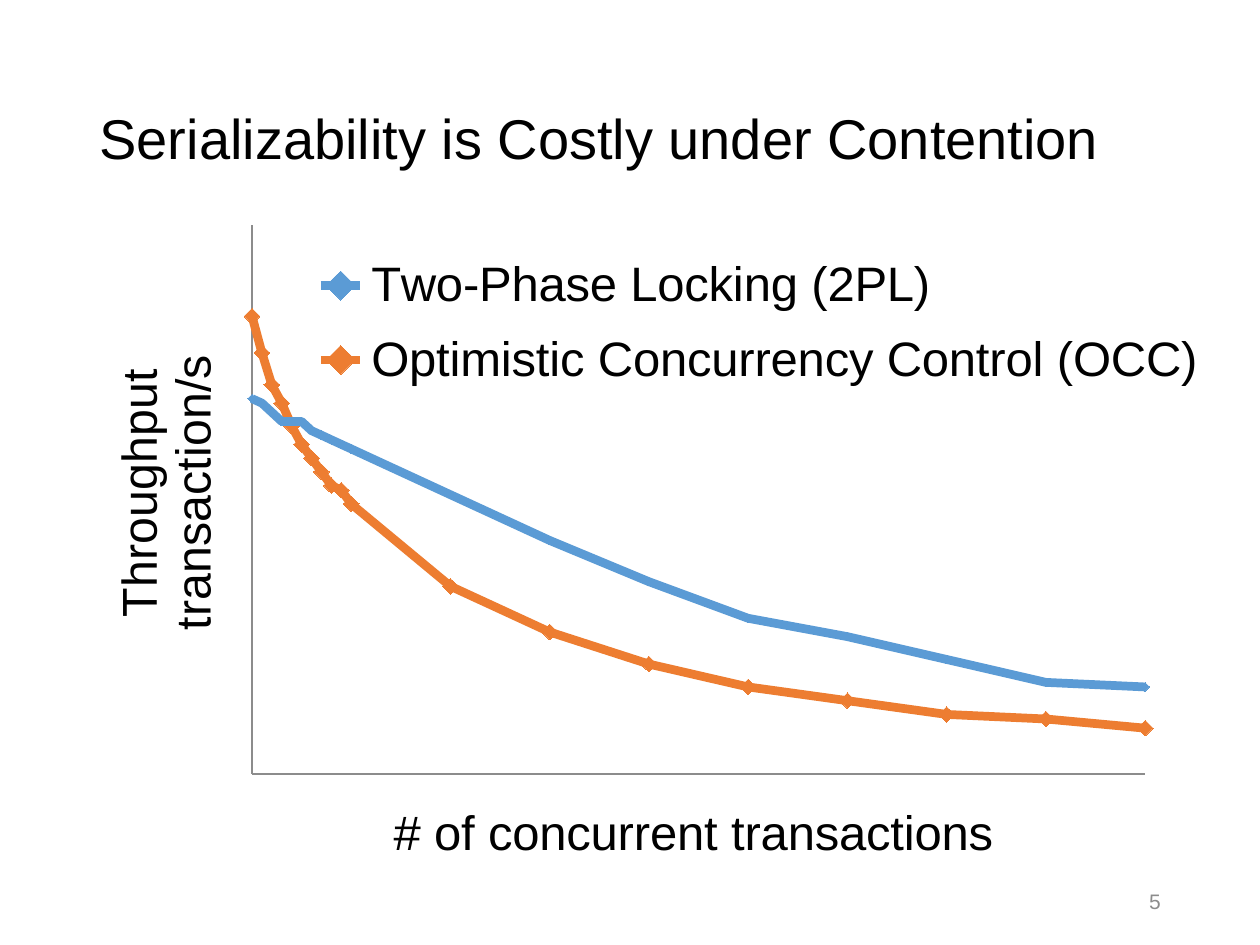
from dataclasses import dataclass

from lxml.etree import SubElement
from pptx import Presentation
from pptx.chart.data import XyChartData
from pptx.dml.color import RGBColor
from pptx.enum.chart import (XL_CHART_TYPE, XL_LEGEND_POSITION as LEGEND_POS,
                             XL_MARKER_STYLE as MARKER,
                             XL_TICK_LABEL_POSITION as LABEL_POS,
                             XL_TICK_MARK as TICK)
from pptx.enum.text import MSO_ANCHOR, PP_ALIGN
from pptx.oxml.ns import qn
from pptx.util import Inches, Pt

FONT = "Arial"
BLACK = RGBColor(0x00, 0x00, 0x00)
GRAY = RGBColor(0x8C, 0x8C, 0x8C)
BLUE = RGBColor(0x5B, 0x9B, 0xD5)
ORANGE = RGBColor(0xED, 0x7D, 0x31)


@dataclass
class Curve:
    name: str
    values: list[int]
    color: RGBColor
    marker: MARKER
    marker_size: int


# Concurrency levels: every step up to 20, then every ten
LEVELS = [*range(10, 20), *range(20, 101, 10)]
CURVES = [
    Curve("Two-Phase Locking (2PL)",
          [82, 81, 79, 77, 77, 77, 75, 74, 73, 72, 71, 61, 51, 42, 34, 30, 25, 20, 19],
          BLUE, MARKER.AUTOMATIC, 5),
    Curve("Optimistic Concurrency Control (OCC)",
          [100, 92, 85, 81, 76, 72, 69, 66, 63, 62, 59, 41, 31, 24, 19, 16, 13, 12, 10],
          ORANGE, MARKER.DIAMOND, 9),
]


def style_font(font, size: float, color: RGBColor = BLACK) -> None:
    font.name, font.size, font.bold = FONT, Pt(size), False
    font.color.rgb = color


def write(tf, text: str, size: float, color: RGBColor = BLACK,
          align: PP_ALIGN = PP_ALIGN.LEFT, spacing: float = 1.0) -> None:
    """Fill a text frame, one paragraph per line of text."""
    for i, line in enumerate(text.split("\n")):
        p = tf.add_paragraph() if i else tf.paragraphs[0]
        p.alignment, p.line_spacing = align, spacing
        r = p.add_run()
        r.text = line
        style_font(r.font, size, color)


def place(element, **fractions: float) -> None:
    """Give a chart part a manual layout in fractions of the chart."""
    for old in element.findall(qn("c:layout")):
        element.remove(old)
    layout = element.makeelement(qn("c:layout"), {})
    manual = SubElement(layout, qn("c:manualLayout"))
    if "w" in fractions:
        SubElement(manual, qn("c:layoutTarget"), val="inner")
    for mode in ("xMode", "yMode"):
        SubElement(manual, qn(f"c:{mode}"), val="edge")
    for key, value in fractions.items():
        SubElement(manual, qn(f"c:{key}"), val=str(value))
    overlay = element.find(qn("c:overlay"))
    if overlay is None:
        element.insert(0, layout)
    else:
        overlay.addprevious(layout)


def format_axis(axis, title: str, low: float, high: float, x: float, y: float) -> None:
    axis.minimum_scale, axis.maximum_scale = low, high
    axis.has_major_gridlines = False
    axis.major_tick_mark = axis.minor_tick_mark = TICK.NONE
    axis.tick_label_position = LABEL_POS.NONE
    axis.format.line.color.rgb = GRAY
    axis.format.line.width = Pt(0.75)
    write(axis.axis_title.text_frame, title, 28, align=PP_ALIGN.CENTER)
    place(axis.axis_title._element, x=x, y=y)


def format_series(series, curve: Curve) -> None:
    series.smooth = False
    series.format.line.color.rgb = curve.color
    series.format.line.width = Pt(5)
    series.marker.style = curve.marker
    series.marker.size = curve.marker_size
    series.marker.format.fill.solid()
    series.marker.format.fill.fore_color.rgb = curve.color
    series.marker.format.line.fill.background()


def add_throughput_chart(slide) -> None:
    data = XyChartData()
    for curve in CURVES:
        series = data.add_series(curve.name)
        for level, value in zip(LEVELS, curve.values):
            series.add_data_point(level, value)
    chart = slide.shapes.add_chart(
        XL_CHART_TYPE.XY_SCATTER_LINES, Inches(0.18), Inches(1.68),
        Inches(9.58), Inches(5.27), data).chart
    chart.has_title = False
    style_font(chart.font, 18)
    plot = chart.plots[0]
    plot.vary_by_categories = False
    for series, curve in zip(plot.series, CURVES):
        format_series(series, curve)

    # Axes and plot area
    format_axis(chart.category_axis, "# of concurrent transactions", 10, 100, 0.3, 0.89)
    format_axis(chart.value_axis, "Throughput\ntransaction/s", 0, 120, 0.07, 0.22)
    place(chart._chartSpace.chart.plotArea, x=0.19, y=0.02, w=0.74, h=0.84)

    # Legend over the plot
    chart.has_legend = True
    chart.legend.position = LEGEND_POS.RIGHT
    chart.legend.include_in_layout = False
    style_font(chart.legend.font, 28)
    place(chart.legend._element, x=0.23, y=0.04, w=0.76, h=0.26)
    for target in chart.legend._element.iter(qn("c:layoutTarget")):
        target.getparent().remove(target)


def main() -> None:
    prs = Presentation()
    prs.slide_width, prs.slide_height = Inches(10), Inches(7.5)
    slide = prs.slides.add_slide(prs.slide_layouts[5])

    # Title
    title = slide.shapes.title
    title.left, title.top = Inches(0.69), Inches(0.4)
    title.width, title.height = Inches(8.62), Inches(1.45)
    title.text_frame.vertical_anchor = MSO_ANCHOR.MIDDLE
    write(title.text_frame, "Serializability is Costly under Contention", 32, spacing=0.9)

    add_throughput_chart(slide)

    # Slide number
    tf = slide.shapes.add_textbox(
        Inches(7.06), Inches(6.95), Inches(2.25), Inches(0.4)).text_frame
    tf.word_wrap = True
    tf.vertical_anchor = MSO_ANCHOR.MIDDLE
    write(tf, "5", 12, GRAY, PP_ALIGN.RIGHT)

    prs.save("out.pptx")


if __name__ == "__main__":
    main()
